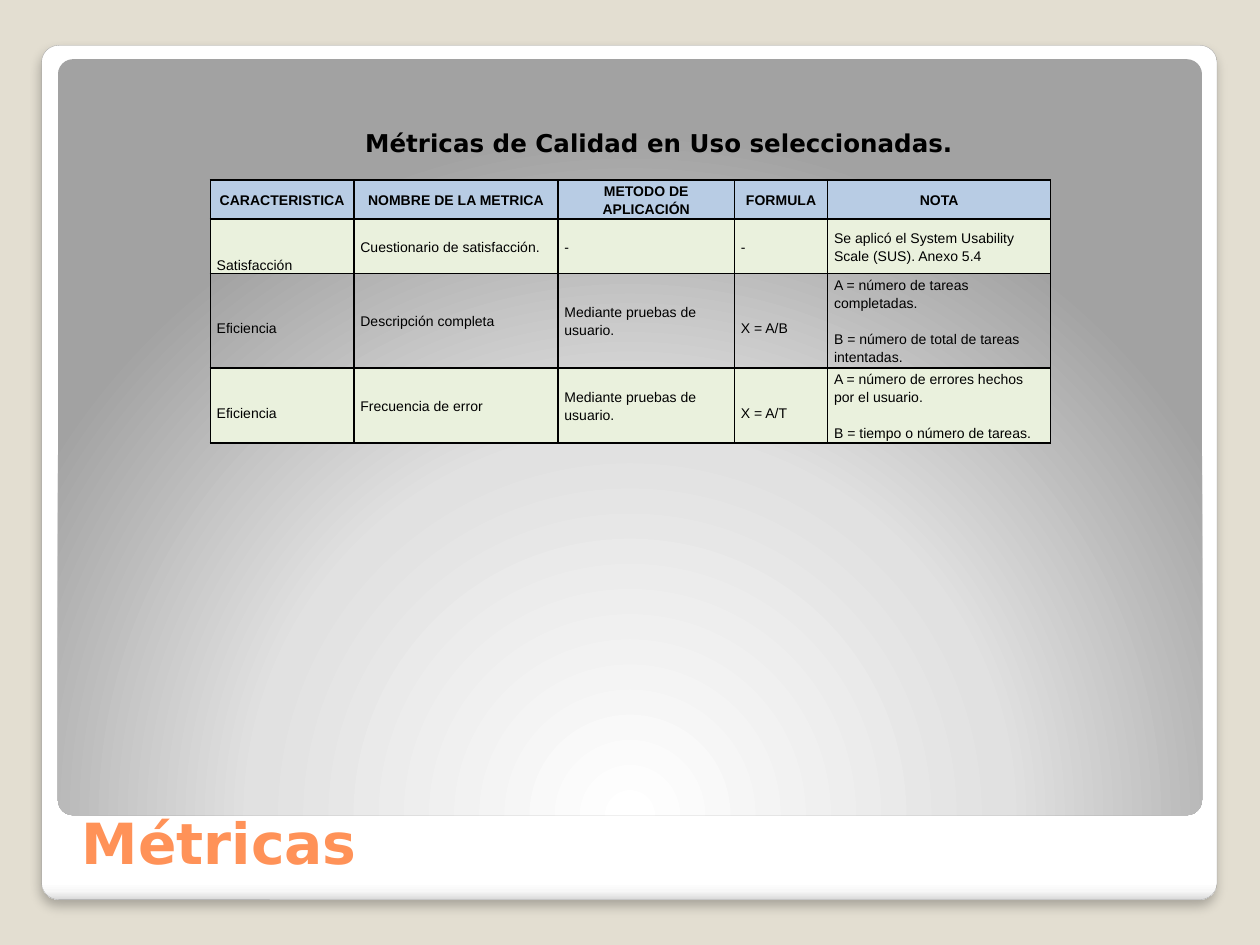
from lxml.etree import SubElement
from pptx import Presentation
from pptx.dml.color import RGBColor
from pptx.enum.shapes import MSO_SHAPE
from pptx.enum.text import MSO_ANCHOR, MSO_AUTO_SIZE, PP_ALIGN
from pptx.oxml.ns import qn
from pptx.util import Inches, Pt

BACKGROUND = RGBColor(0xE3, 0xDE, 0xD1)
WHITE = RGBColor(0xFF, 0xFF, 0xFF)
NEAR_WHITE = RGBColor(0xF7, 0xF7, 0xF7)
PALE_GRAY = RGBColor(0xE1, 0xE1, 0xE1)
EDGE_GRAY = RGBColor(0xDA, 0xDA, 0xDA)
DARK_GRAY = RGBColor(0xA2, 0xA2, 0xA2)
OUTLINE = RGBColor(0xA4, 0xA4, 0xA4)
ORANGE = RGBColor(0xFF, 0x92, 0x58)
BLACK = RGBColor(0x00, 0x00, 0x00)
HEADER_BLUE = RGBColor(0xB8, 0xCC, 0xE4)
ROW_GREEN = RGBColor(0xEA, 0xF1, 0xDD)

COLUMN_WIDTHS = [1.14, 1.62, 1.4, 0.74, 1.77]
ROW_HEIGHTS = [0.31, 0.43, 0.53, 0.53]
ROW_FILLS = [HEADER_BLUE, ROW_GREEN, None, ROW_GREEN]
DOUBLE_SPACED = {"Satisfacción", "Eficiencia", "X = A/B", "X = A/T"}
METRICS = [
    ["CARACTERISTICA", "NOMBRE DE LA METRICA", "METODO DE APLICACIÓN", "FORMULA", "NOTA"],
    ["Satisfacción", "Cuestionario de satisfacción.", "-", "-",
     "Se aplicó el System Usability Scale (SUS). Anexo 5.4"],
    ["Eficiencia", "Descripción completa", "Mediante pruebas de usuario.", "X = A/B",
     "A = número de tareas completadas.\nB = número de total de tareas intentadas."],
    ["Eficiencia", "Frecuencia de error", "Mediante pruebas de usuario.", "X = A/T",
     "A = número de errores hechos por el usuario.\nB = tiempo o número de tareas."],
]


def add_color(parent, color, alpha=None):
    element = SubElement(parent, qn("a:srgbClr"), val=str(color))
    if alpha is not None:
        SubElement(element, qn("a:alpha"), val=str(alpha * 1000))


class MetricsSlide:
    heading_font = "DejaVu Sans"
    table_font = "Arial"

    def __init__(self, deck):
        self.page = deck.slides.add_slide(deck.slide_layouts[5])
        fill = self.page.background.fill
        fill.solid()
        fill.fore_color.rgb = BACKGROUND

    def add_span(self, para, text, font, size, color, bold=False):
        span = para.add_run()
        span.text = text
        span.font.name = font
        span.font.size = Pt(size)
        span.font.color.rgb = color
        span.font.bold = bold

    def panel(self, left, top, width, height, stops, radial=False):
        panel = self.page.shapes.add_shape(
            MSO_SHAPE.ROUNDED_RECTANGLE, Inches(left), Inches(top), Inches(width), Inches(height))
        panel.adjustments[0] = 0.02
        panel.shadow.inherit = False
        panel.line.fill.background()
        panel.fill.gradient()
        gradient = panel.element.spPr.find(qn("a:gradFill"))
        for child in list(gradient):
            gradient.remove(child)
        stop_list = SubElement(gradient, qn("a:gsLst"))
        for position, color in stops:
            add_color(SubElement(stop_list, qn("a:gs"), pos=str(position * 1000)), color)
        if radial:
            focus = SubElement(gradient, qn("a:path"), {"path": "circle"})
            SubElement(focus, qn("a:fillToRect"), l="50000", t="175000", r="50000", b="-75000")
        else:
            SubElement(gradient, qn("a:lin"), ang="5400000", scaled="0")
        return panel

    def outline_and_shadow(self, panel):
        panel.line.color.rgb = OUTLINE
        panel.line.width = Pt(0.16)
        effects = panel.element.spPr.find(qn("a:effectLst"))
        shadow = SubElement(effects, qn("a:outerShdw"), blurRad=str(int(Pt(6))),
                            dist=str(int(Pt(4))), dir="5400000", algn="tl", rotWithShape="0")
        add_color(shadow, BLACK, alpha=25)

    def title(self, text, left, top, width, height):
        title = self.page.shapes.title
        title.element.getparent().append(title.element)
        title.left, title.top = Inches(left), Inches(top)
        title.width, title.height = Inches(width), Inches(height)
        frame = title.text_frame
        frame.auto_size = MSO_AUTO_SIZE.NONE
        frame.vertical_anchor = MSO_ANCHOR.BOTTOM
        para = frame.paragraphs[0]
        para.alignment = PP_ALIGN.LEFT
        self.add_span(para, text, self.heading_font, 32.4, ORANGE, bold=True)

    def caption(self, text, left, top, width, height):
        box = self.page.shapes.add_textbox(Inches(left), Inches(top), Inches(width), Inches(height))
        frame = box.text_frame
        frame.word_wrap = True
        frame.auto_size = MSO_AUTO_SIZE.SHAPE_TO_FIT_TEXT
        self.add_span(frame.paragraphs[0], text, self.heading_font, 14, BLACK, bold=True)

    def cell(self, cell, text, fill, header):
        properties = cell._tc.get_or_add_tcPr()
        for side in ("a:lnL", "a:lnR", "a:lnT", "a:lnB"):
            border = SubElement(properties, qn(side), w=str(int(Pt(1))))
            add_color(SubElement(border, qn("a:solidFill")), BLACK)
        if fill is None:
            cell.fill.background()
        else:
            cell.fill.solid()
            cell.fill.fore_color.rgb = fill
        cell.margin_left = cell.margin_right = Inches(0.05)
        cell.margin_top = cell.margin_bottom = 0
        cell.vertical_anchor = MSO_ANCHOR.BOTTOM if text == "Satisfacción" else MSO_ANCHOR.MIDDLE
        frame = cell.text_frame
        for index, line in enumerate(text.split("\n")):
            para = frame.add_paragraph() if index else frame.paragraphs[0]
            para.alignment = PP_ALIGN.CENTER if header else PP_ALIGN.LEFT
            para.line_spacing = 2.0 if text in DOUBLE_SPACED else 1.15
            para.space_after = Pt(10)
            self.add_span(para, line, self.table_font, 8, BLACK, bold=header)

    def table(self, left, top):
        frame = self.page.shapes.add_table(
            len(ROW_HEIGHTS), len(COLUMN_WIDTHS), Inches(left), Inches(top),
            Inches(sum(COLUMN_WIDTHS)), Inches(sum(ROW_HEIGHTS)))
        table = frame.table
        table.first_row = table.horz_banding = False
        for column, width in zip(table.columns, COLUMN_WIDTHS):
            column.width = Inches(width)
        for index, (row, height) in enumerate(zip(table.rows, ROW_HEIGHTS)):
            row.height = Inches(height)
            for cell, text in zip(row.cells, METRICS[index]):
                self.cell(cell, text, ROW_FILLS[index], header=index == 0)


def main():
    deck = Presentation()
    deck.slide_width, deck.slide_height = Inches(10), Inches(7.5)
    slide = MetricsSlide(deck)
    card = slide.panel(0.33, 0.36, 9.33, 6.78,
                       [(0, WHITE), (98, WHITE), (99, NEAR_WHITE), (100, EDGE_GRAY)])
    slide.outline_and_shadow(card)
    slide.panel(0.46, 0.47, 9.08, 6,
                [(0, WHITE), (55, PALE_GRAY), (100, DARK_GRAY)], radial=True)
    slide.title("Métricas", 0.55, 6.35, 8.95, 0.65)
    slide.caption("Métricas de Calidad en Uso seleccionadas.", 2.8, 0.97, 5.12, 0.34)
    slide.table(1.67, 1.43)
    deck.save("out.pptx")


if __name__ == "__main__":
    main()
